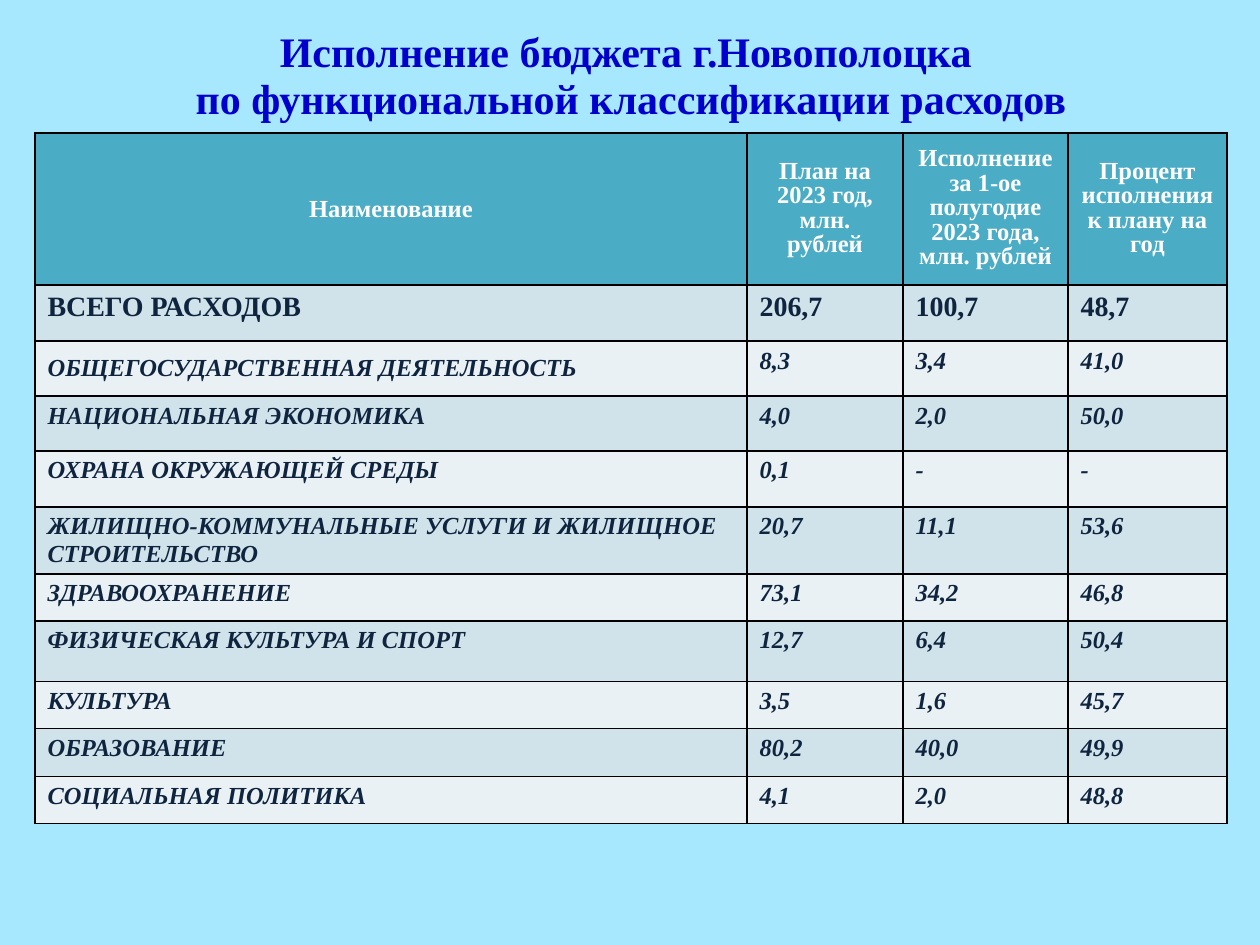
from lxml import etree
from pptx import Presentation
from pptx.dml.color import RGBColor
from pptx.enum.text import MSO_ANCHOR, PP_ALIGN
from pptx.oxml.ns import qn
from pptx.util import Emu, Pt

CENTER, LEFT = PP_ALIGN.CENTER, PP_ALIGN.LEFT
MIDDLE, TOP = MSO_ANCHOR.MIDDLE, MSO_ANCHOR.TOP

PX = 914400 / 126
FONT = "Times New Roman"
COLORS = {
    "page": "A7E8FF", "title": "0000CC", "header": "4BACC6", "white": "FFFFFF",
    "ink": "0F243E", "dark_band": "D0E3EA", "light_band": "E9F1F5", "border": "000000",
}

HEADERS = [
    "Наименование",
    "План на 2023 год, млн. рублей",
    "Исполнение за 1-ое полугодие 2023 года, млн. рублей",
    "Процент исполнения к плану на год",
]
EXPENSES = [
    ["ВСЕГО РАСХОДОВ", "206,7", "100,7", "48,7"],
    ["ОБЩЕГОСУДАРСТВЕННАЯ ДЕЯТЕЛЬНОСТЬ", "8,3", "3,4", "41,0"],
    ["НАЦИОНАЛЬНАЯ ЭКОНОМИКА", "4,0", "2,0", "50,0"],
    ["ОХРАНА ОКРУЖАЮЩЕЙ СРЕДЫ", "0,1", "-", "-"],
    ["ЖИЛИЩНО-КОММУНАЛЬНЫЕ УСЛУГИ И ЖИЛИЩНОЕ СТРОИТЕЛЬСТВО", "20,7", "11,1", "53,6"],
    ["ЗДРАВООХРАНЕНИЕ", "73,1", "34,2", "46,8"],
    ["ФИЗИЧЕСКАЯ КУЛЬТУРА И СПОРТ", "12,7", "6,4", "50,4"],
    ["КУЛЬТУРА", "3,5", "1,6", "45,7"],
    ["ОБРАЗОВАНИЕ", "80,2", "40,0", "49,9"],
    ["СОЦИАЛЬНАЯ ПОЛИТИКА", "4,1", "2,0", "48,8"],
]
COLUMN_WIDTHS = [712, 156, 165, 159]
ROW_HEIGHTS = [152, 56, 55, 55, 56, 67, 47, 61, 47, 48, 47]


def px(length):
    return Emu(round(length * PX))


def rgb(name):
    return RGBColor.from_string(COLORS[name])


class SlideBuilder:
    def __init__(self, deck):
        self.page = deck.slides.add_slide(deck.slide_layouts[5])
        background = self.page.background.fill
        background.solid()
        background.fore_color.rgb = rgb("page")

    def set_text(self, frame, text, color, size, align=LEFT, spacing=None, italic=False):
        frame.text = text
        para = frame.paragraphs[0]
        para.alignment = align
        if spacing:
            para.line_spacing = Pt(spacing)
        style = {"name": FONT, "size": Pt(size), "bold": True, "italic": italic}
        for span in para.runs:
            for name, value in style.items():
                setattr(span.font, name, value)
            span.font.color.rgb = rgb(color)

    def title(self, text, left, top, width, height):
        box = self.page.shapes.title
        box.left, box.top, box.width, box.height = map(px, (left, top, width, height))
        box.text_frame.vertical_anchor = MIDDLE
        self.set_text(box.text_frame, text, "title", 24, CENTER, 27)

    def table(self, left, top, widths, heights):
        frame = self.page.shapes.add_table(
            len(heights), len(widths), px(left), px(top), px(sum(widths)), px(sum(heights)))
        grid = frame.table
        for column, width in zip(grid.columns, widths):
            column.width = px(width)
        for row, height in zip(grid.rows, heights):
            row.height = px(height)
        return grid

    def cell(self, cell, text, fill, anchor=TOP, **style):
        self.set_text(cell.text_frame, text, **style)
        cell.vertical_anchor = anchor
        self.borders(cell)
        cell.fill.solid()
        cell.fill.fore_color.rgb = rgb(fill)

    def borders(self, cell):
        properties = cell._tc.get_or_add_tcPr()
        for side in ("a:lnL", "a:lnR", "a:lnT", "a:lnB"):
            line = etree.SubElement(properties, qn(side), w=str(Pt(1)))
            solid = etree.SubElement(line, qn("a:solidFill"))
            etree.SubElement(solid, qn("a:srgbClr"), val=COLORS["border"])


def main():
    deck = Presentation()
    deck.slide_width, deck.slide_height = px(1260), px(945)
    builder = SlideBuilder(deck)

    # Title
    builder.title(
        "Исполнение бюджета г.Новополоцка \vпо функциональной классификации расходов",
        64, 17, 1134, 117)

    # Table header
    grid = builder.table(35, 133, COLUMN_WIDTHS, ROW_HEIGHTS)
    for column, text in enumerate(HEADERS):
        builder.cell(grid.cell(0, column), text, "header", MIDDLE, color="white", size=14,
                     align=CENTER, spacing=14 if column else None)

    # Expense rows: the total is larger and upright, the rest are italic
    for row, values in enumerate(EXPENSES, start=1):
        total = row == 1
        fill = "dark_band" if row % 2 else "light_band"
        for column, text in enumerate(values):
            anchor = MIDDLE if (row, column) == (2, 0) else TOP
            builder.cell(grid.cell(row, column), text, fill, anchor, color="ink",
                         size=16 if total else 14, italic=not total)

    deck.save("out.pptx")


if __name__ == "__main__":
    main()
